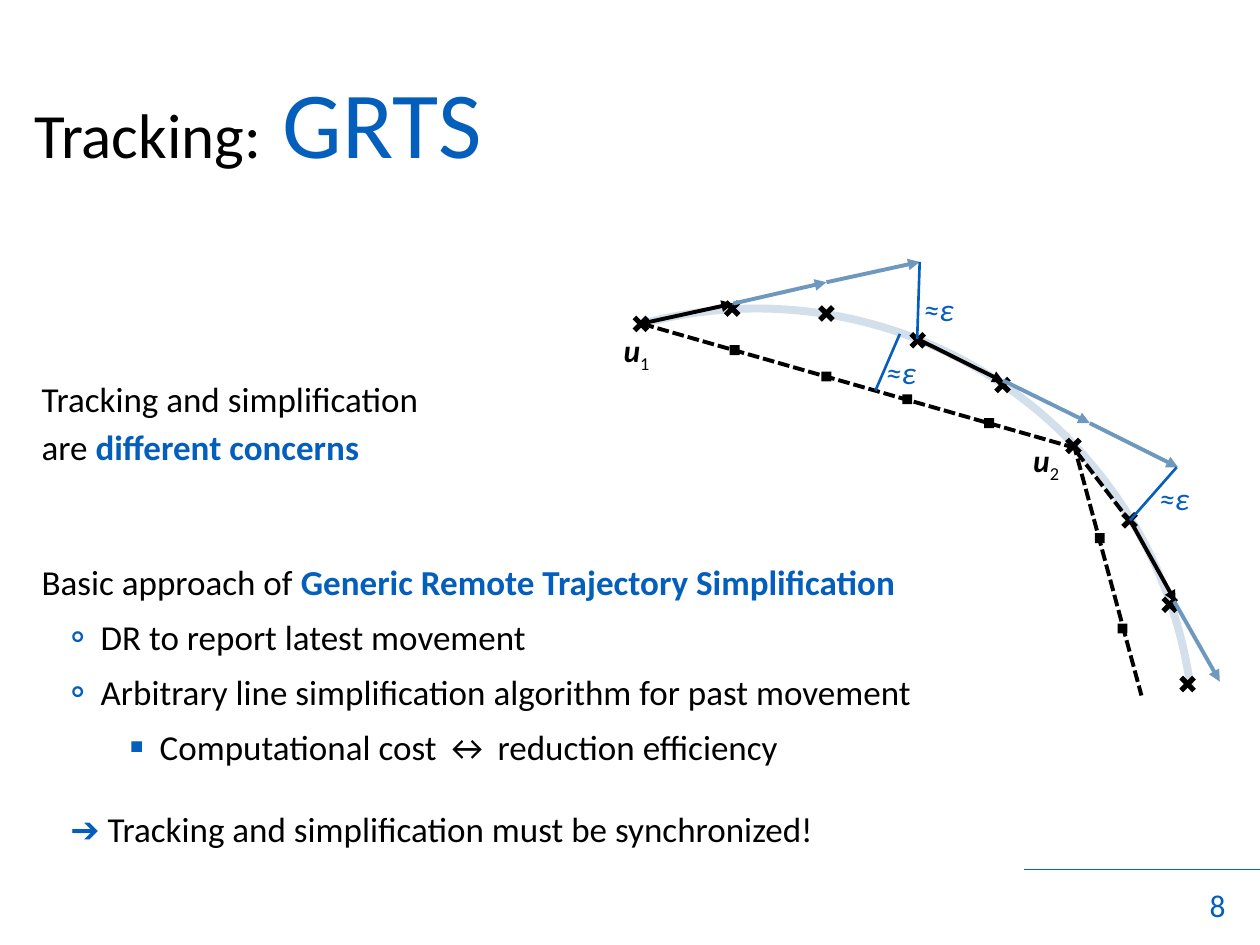
from lxml import etree
from pptx import Presentation
from pptx import util as u
from pptx.dml.color import RGBColor
from pptx.enum import dml, shapes, text
from pptx.oxml.ns import qn

COLORS = {"black": "000000", "blue": "045EBC", "light": "6F98BF", "pale": "D3DFEB"}
FONT = "Calibri"

# Text runs are (text, format) pairs; "\n" is a line break.
PLAIN, BLUE, STRONG = {}, {"color": "blue"}, {"color": "blue", "bold": True}
TITLE = [("Tracking:", {"size": 36}), (" GRTS", {"size": 54, "color": "blue"})]
# level, bullet, space before (pt), runs
BODY = [
    (0, None, 4, [("Tracking and simplification\nare ", PLAIN), ("different concerns", STRONG)]),
    (0, None, 50, [("Basic approach of ", PLAIN),
                   ("Generic Remote Trajectory Simplification", STRONG)]),
    (1, "◦", 4, [("DR to report latest movement", PLAIN)]),
    (1, "◦", 4, [("Arbitrary line simplification algorithm for past movement", PLAIN)]),
    (2, "▪", 4, [("Computational cost ↔ reduction efficiency", PLAIN)]),
    (1, None, 19.5, [("➔ ", BLUE), ("Tracking and simplification must be synchronized!", PLAIN)]),
]
LEVEL_STEP, HANGING = 1.19, 0.61

# Drawing coordinates in cm
POSITIONS = [(12.92, 6.53), (14.76, 6.22), (16.66, 6.32), (18.5, 6.86), (20.21, 7.76),
             (21.64, 8.99), (22.77, 10.49), (23.58, 12.19), (23.94, 13.79)]
SIMPLIFIED_POINTS = [(14.81, 7.06), (16.66, 7.59), (18.29, 8.05), (19.94, 8.53),
                     (22.17, 10.85), (22.63, 12.67)]
LINE_STYLES = {
    "simplification": {"color": "black", "width": 2.25, "dashed": True},
    "prediction": {"color": "light", "width": 2.25, "arrow": True},
    "movement": {"color": "black", "width": 2.25, "arrow": True},
    "deviation": {"color": "blue", "width": 1.5},
}
# Each path is a chain of points; every step is one line.
PATHS = [
    ("simplification", [(12.95, 6.53), (21.64, 9.02)]),
    ("simplification", [(21.64, 8.94), (23.01, 14.02)]),
    ("simplification", [(21.51, 8.86), (22.76, 10.49)]),
    ("movement", [(12.9, 6.53), (14.78, 6.12)]),
    ("movement", [(18.49, 6.83), (20.24, 7.7)]),
    ("movement", [(22.81, 10.54), (23.7, 12.14)]),
    ("prediction", [(14.78, 6.12), (16.66, 5.69), (18.54, 5.28)]),
    ("prediction", [(20.22, 7.67), (21.97, 8.53), (23.75, 9.42)]),
    ("prediction", [(23.67, 12.12), (24.59, 13.74)]),
    ("deviation", [(18.54, 5.28), (18.49, 6.83)]),
    ("deviation", [(17.65, 7.87), (18.14, 6.73)]),
    ("deviation", [(23.72, 9.42), (22.78, 10.49)]),
]
EPSILON = [("≈ε", {"size": 18, "color": "blue", "italic": True})]
LABELS = [((18.62, 5.84), EPSILON), ((17.86, 7.11), EPSILON), ((23.37, 9.65), EPSILON)]
for index, corner in [("1", (12.57, 6.68)), ("2", (20.83, 8.89))]:
    LABELS.append((corner, [("u", {"size": 18, "bold": True, "italic": True}),
                            (index, {"size": 18, "subscript": True})]))


def rgb(name):
    return RGBColor.from_string(COLORS[name])


def add_text(paragraph, content, size=20, color="black", bold=False, italic=False,
             subscript=False):
    for number, part in enumerate(content.split("\n")):
        if number:
            paragraph.add_line_break()
        run = paragraph.add_run()
        run.text = part
        run.font.name, run.font.size = FONT, u.Pt(size)
        run.font.bold, run.font.italic = bold, italic
        run.font.color.rgb = rgb(color)
        if subscript:
            run.font._element.set("baseline", "-25000")


def add_runs(paragraph, runs):
    for content, style in runs:
        add_text(paragraph, content, **style)


def set_frame(frame, anchor=text.MSO_ANCHOR.TOP, wrap=False, top=0):
    frame.margin_left = frame.margin_right = frame.margin_bottom = 0
    frame.margin_top = u.Cm(top)
    frame.auto_size = text.MSO_AUTO_SIZE.NONE
    frame.vertical_anchor, frame.word_wrap = anchor, wrap


def add_box(slide, left, top, width, height, **frame_format):
    box = slide.shapes.add_textbox(*map(u.Cm, (left, top, width, height)))
    set_frame(box.text_frame, **frame_format)
    return box.text_frame


def add_line(target, start, end, color="black", width=3, dashed=False, arrow=False):
    line = target.add_connector(shapes.MSO_CONNECTOR.STRAIGHT, *map(u.Cm, (*start, *end)))
    line.line.color.rgb, line.line.width = rgb(color), u.Pt(width)
    if dashed:
        line.line.dash_style = dml.MSO_LINE.SQUARE_DOT
    if arrow:
        etree.SubElement(line.line._get_or_add_ln(), qn("a:tailEnd"), type="triangle")
    etree.SubElement(line._element.spPr, qn("a:effectLst"))


def set_paragraph(paragraph, level, bullet, space_before):
    paragraph.line_spacing, paragraph.space_before = 1.14, u.Pt(space_before)
    properties = paragraph._p.get_or_add_pPr()
    properties.set("marL", str(u.Cm(HANGING + level * LEVEL_STEP)))
    properties.set("indent", str(-u.Cm(HANGING) if level else 0))
    if bullet:
        color = etree.SubElement(properties, qn("a:buClr"))
        etree.SubElement(color, qn("a:srgbClr"), val=COLORS["blue"])
        etree.SubElement(properties, qn("a:buSzPct"), val="120000")
        etree.SubElement(properties, qn("a:buFont"), typeface=FONT)
        etree.SubElement(properties, qn("a:buChar"), char=bullet)


def add_title(slide):
    title = slide.shapes.title
    title.left, title.top, title.width, title.height = map(u.Cm, (0.69, 1.19, 24, 2.84))
    set_frame(title.text_frame, wrap=True, top=0.1)
    paragraph = title.text_frame.paragraphs[0]
    paragraph.alignment = text.PP_ALIGN.LEFT
    add_runs(paragraph, TITLE)


def add_body(slide):
    frame = add_box(slide, 0.23, 6.53, 18.49, 10.59, anchor=text.MSO_ANCHOR.BOTTOM, wrap=True)
    for number, (level, bullet, space_before, runs) in enumerate(BODY):
        paragraph = frame.add_paragraph() if number else frame.paragraphs[0]
        set_paragraph(paragraph, level, bullet, space_before)
        add_runs(paragraph, runs)


def add_trajectory(slide):
    arc = slide.shapes.add_shape(shapes.MSO_SHAPE.ARC, *map(u.Cm, (6.43, 6.22, 17.65, 17.65)))
    arc.adjustments[0], arc.adjustments[1] = 162, 4.625
    arc.rotation = 344.4
    arc.shadow.inherit = False
    arc.fill.background()
    arc.line.color.rgb, arc.line.width = rgb("pale"), u.Pt(4.5)

    half = 0.13
    for x, y in POSITIONS:
        cross = slide.shapes.add_group_shape().shapes
        for rise in (half, -half):
            add_line(cross, (x - half, y + rise), (x + half, y - rise))

    for style, points in PATHS:
        for start, end in zip(points, points[1:]):
            add_line(slide.shapes, start, end, **LINE_STYLES[style])

    side = 0.2
    for x, y in SIMPLIFIED_POINTS:
        square = slide.shapes.add_shape(
            shapes.MSO_SHAPE.RECTANGLE, *map(u.Cm, (x - side / 2, y - side / 2, side, side)))
        square.shadow.inherit = False
        square.fill.solid()
        square.fill.fore_color.rgb = rgb("black")
        square.line.fill.background()

    for corner, runs in LABELS:
        add_runs(add_box(slide, *corner, 0.62, 0.76).paragraphs[0], runs)


def add_footer(slide):
    add_line(slide.shapes, (20.65, 17.53), (25.4, 17.53), color="blue", width=1)
    frame = add_box(slide, 22.63, 17.48, 2.08, 1.27, anchor=text.MSO_ANCHOR.BOTTOM)
    frame.margin_bottom = u.Cm(0.13)
    frame.paragraphs[0].alignment = text.PP_ALIGN.RIGHT
    add_text(frame.paragraphs[0], "8", size=18, color="blue")


def main():
    presentation = Presentation()
    presentation.slide_width, presentation.slide_height = u.Cm(25.4), u.Cm(19.05)
    slide = presentation.slides.add_slide(presentation.slide_layouts[5])
    add_footer(slide)
    add_title(slide)
    add_body(slide)
    add_trajectory(slide)
    presentation.save("out.pptx")


if __name__ == "__main__":
    main()
